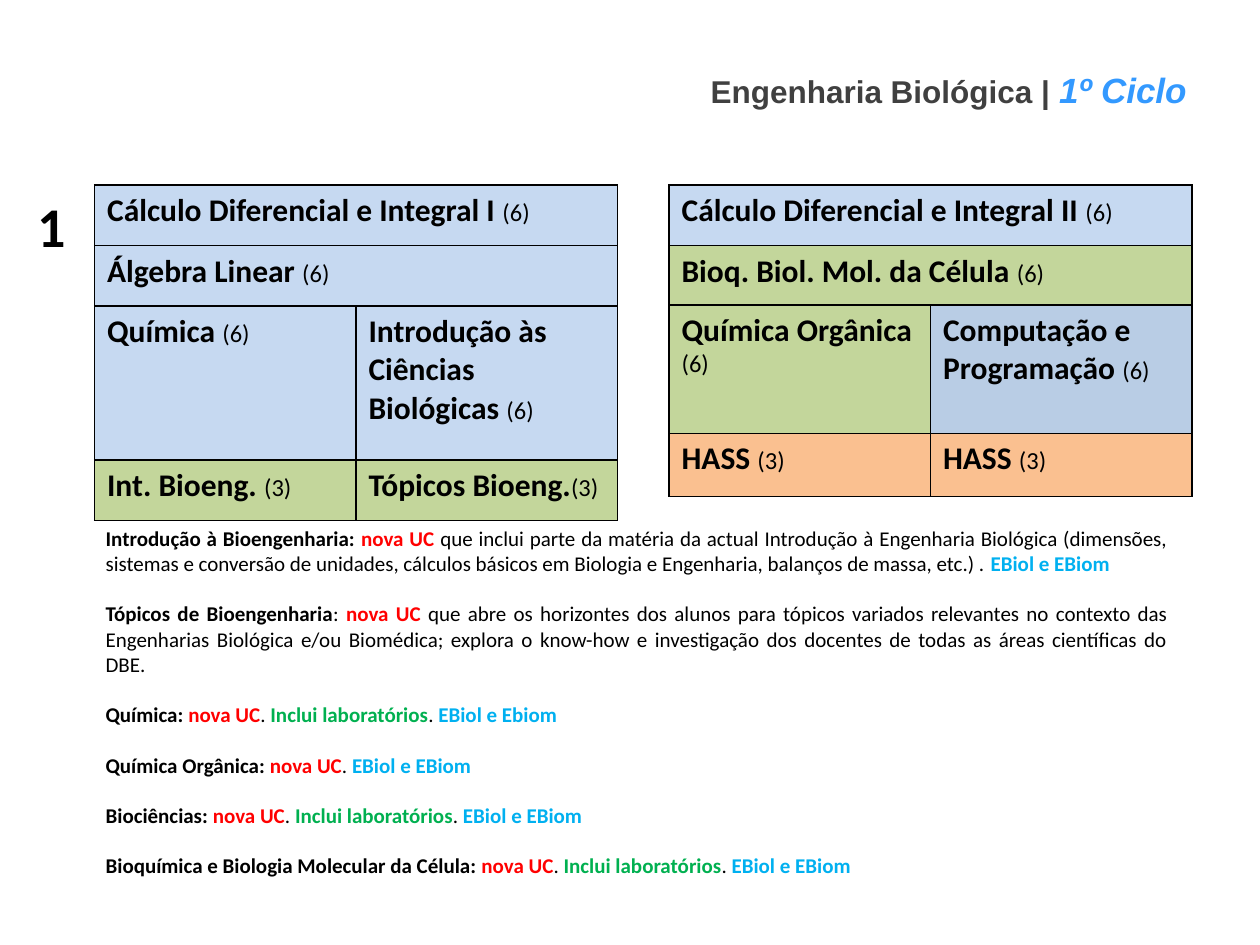
from dataclasses import dataclass

from lxml.etree import SubElement
from pptx import Presentation
from pptx.dml.color import RGBColor as Rgb
from pptx.enum.text import MSO_ANCHOR as Anchor, MSO_AUTO_SIZE as AutoSize, PP_ALIGN as Align
from pptx.oxml.ns import qn
from pptx.util import Inches, Pt


@dataclass(frozen=True)
class Theme:
    """Colours and type sizes of the slide."""
    black: str = "000000"
    heading: str = "404040"
    cycle: str = "3399FF"
    new: str = "FF0000"
    labs: str = "00B050"
    degrees: str = "00B0F0"
    blue: str = "C6D9F1"
    steel: str = "B9CDE5"
    green: str = "C3D69B"
    orange: str = "FAC090"
    body: str = "Calibri"
    display: str = "Arial"
    year_size: int = 32
    cycle_size: int = 20
    course_size: int = 18
    credit_size: int = 14
    note_size: int = 12
    note_gap: float = 14.4
    border: int = 1


THEME = Theme()


def style(size, color=THEME.black, bold=True, italic=False, name=THEME.body):
    """Describe the look of a run as its colour and its font values."""
    return color, {"size": Pt(size), "bold": bold, "italic": italic, "name": name}


COURSE = style(THEME.course_size)
CREDIT = style(THEME.credit_size, bold=False)
TOPIC = style(THEME.note_size)
PLAIN = style(THEME.note_size, bold=False)
NEW = style(THEME.note_size, THEME.new)
LABS = style(THEME.note_size, THEME.labs)
DEGREES = style(THEME.note_size, THEME.degrees)


def write(frame, paragraphs, **paragraph_format):
    """Fill a text frame with paragraphs of (text, style) runs."""
    for index, runs in enumerate(paragraphs):
        paragraph = frame.add_paragraph() if index else frame.paragraphs[0]
        for attribute, value in paragraph_format.items():
            setattr(paragraph, attribute, value)
        for text, (color, font_values) in runs:
            run = paragraph.add_run()
            run.text = text
            for attribute, value in font_values.items():
                setattr(run.font, attribute, value)
            run.font.color.rgb = Rgb.from_string(color)


def add_text(slide, place, paragraphs, frame_format, **paragraph_format):
    """Add a text box at left, top, width, height in inches."""
    frame = slide.shapes.add_textbox(*map(Inches, place)).text_frame
    for attribute, value in frame_format.items():
        setattr(frame, attribute, value)
    write(frame, paragraphs, **paragraph_format)


def dress_cell(cell, fill):
    """Give a cell its four borders and its fill."""
    properties = cell._tc.get_or_add_tcPr()
    for side in ("lnL", "lnR", "lnT", "lnB"):
        line = SubElement(properties, qn(f"a:{side}"), w=str(Pt(THEME.border)))
        SubElement(SubElement(line, qn("a:solidFill")), qn("a:srgbClr"), val=THEME.black)
    cell.fill.solid()
    cell.fill.fore_color.rgb = Rgb.from_string(fill)


def add_semester(slide, left, heights, courses):
    """Add a semester table in which a lone course spans both columns."""
    place = map(Inches, (left, 1.47, 4.15, sum(heights)))
    semester = slide.shapes.add_table(len(courses), 2, *place).table
    semester.first_row = semester.horz_banding = False
    for row, (height, row_courses) in enumerate(zip(heights, courses)):
        semester.rows[row].height = Inches(height)
        for column in range(2):
            dress_cell(semester.cell(row, column), row_courses[min(column, len(row_courses) - 1)][2])
        if len(row_courses) == 1:
            semester.cell(row, 0).merge(semester.cell(row, 1))
        for column, (course, credits, _) in enumerate(row_courses):
            runs = [(course.rstrip("\n"), COURSE), (f"({credits})", CREDIT)]
            paragraphs = [runs[:1], runs[1:]] if course.endswith("\n") else [runs]
            write(semester.cell(row, column).text_frame, paragraphs)


def unit_note(topic, has_labs=True, degrees="EBiol e EBiom"):
    """Compose the short note on a new unit."""
    labs = [("Inclui laboratórios", LABS), (". ", PLAIN)] if has_labs else []
    return [(f"{topic}: ", TOPIC), ("nova UC", NEW), (". ", PLAIN), *labs, (degrees, DEGREES)]


def main():
    """Build and save the slide."""
    deck = Presentation()
    deck.slide_width, deck.slide_height = Inches(10), Inches(7.5)
    slide = deck.slides.add_slide(deck.slide_layouts[6])

    add_semester(slide, 0.75, (0.48, 0.48, 1.22, 0.48), [
        [("Cálculo Diferencial e Integral I ", 6, THEME.blue)],
        [("Álgebra Linear ", 6, THEME.blue)],
        [("Química ", 6, THEME.blue), ("Introdução às Ciências Biológicas ", 6, THEME.blue)],
        [("Int. Bioeng. ", 3, THEME.green), ("Tópicos Bioeng.", 3, THEME.green)],
    ])
    add_semester(slide, 5.31, (0.48, 0.47, 1.02, 0.5), [
        [("Cálculo Diferencial e Integral II ", 6, THEME.blue)],
        [("Bioq. Biol. Mol. da Célula ", 6, THEME.green)],
        [("Química Orgânica\n", 6, THEME.green), ("Computação e Programação ", 6, THEME.steel)],
        [("HASS ", 3, THEME.orange), ("HASS ", 3, THEME.orange)],
    ])

    growing = {"word_wrap": True, "auto_size": AutoSize.SHAPE_TO_FIT_TEXT}
    add_text(slide, (0.2, 1.47, 0.31, 0.64), [[("1", style(THEME.year_size))]],
             {**growing, "word_wrap": False})

    notes = [
        [("Introdução à Bioengenharia: ", TOPIC), ("nova UC", NEW),
         (" que inclui parte da matéria da actual Introdução à Engenharia Biológica "
          "(dimensões, sistemas e conversão de unidades, cálculos básicos em Biologia e "
          "Engenharia, balanços de massa, etc.) . ", PLAIN),
         ("EBiol e EBiom", DEGREES)],
        [("Tópicos de Bioengenharia", TOPIC), (": ", PLAIN), ("nova UC", NEW),
         (" que abre os horizontes dos alunos para tópicos variados relevantes no contexto "
          "das Engenharias Biológica e/ou Biomédica; explora o know-how e investigação dos "
          "docentes de todas as áreas científicas do DBE. ", PLAIN)],
        unit_note("Química", degrees="EBiol e Ebiom"),
        unit_note("Química Orgânica", has_labs=False),
        unit_note("Biociências"),
        unit_note("Bioquímica e Biologia Molecular da Célula"),
    ]
    add_text(slide, (0.74, 4.12, 8.63, 3.33), notes, growing,
             alignment=Align.JUSTIFY, space_after=Pt(THEME.note_gap))

    heading = [
        ("Engenharia Biológica | ", style(THEME.course_size, THEME.heading, name=THEME.display)),
        ("1º Ciclo", style(THEME.cycle_size, THEME.cycle, italic=True, name=THEME.display)),
    ]
    add_text(slide, (5.06, 0.29, 4.94, 0.68), [heading],
             {"word_wrap": True, "vertical_anchor": Anchor.MIDDLE},
             alignment=Align.CENTER, line_spacing=1.5)

    deck.save("out.pptx")


if __name__ == "__main__":
    main()
